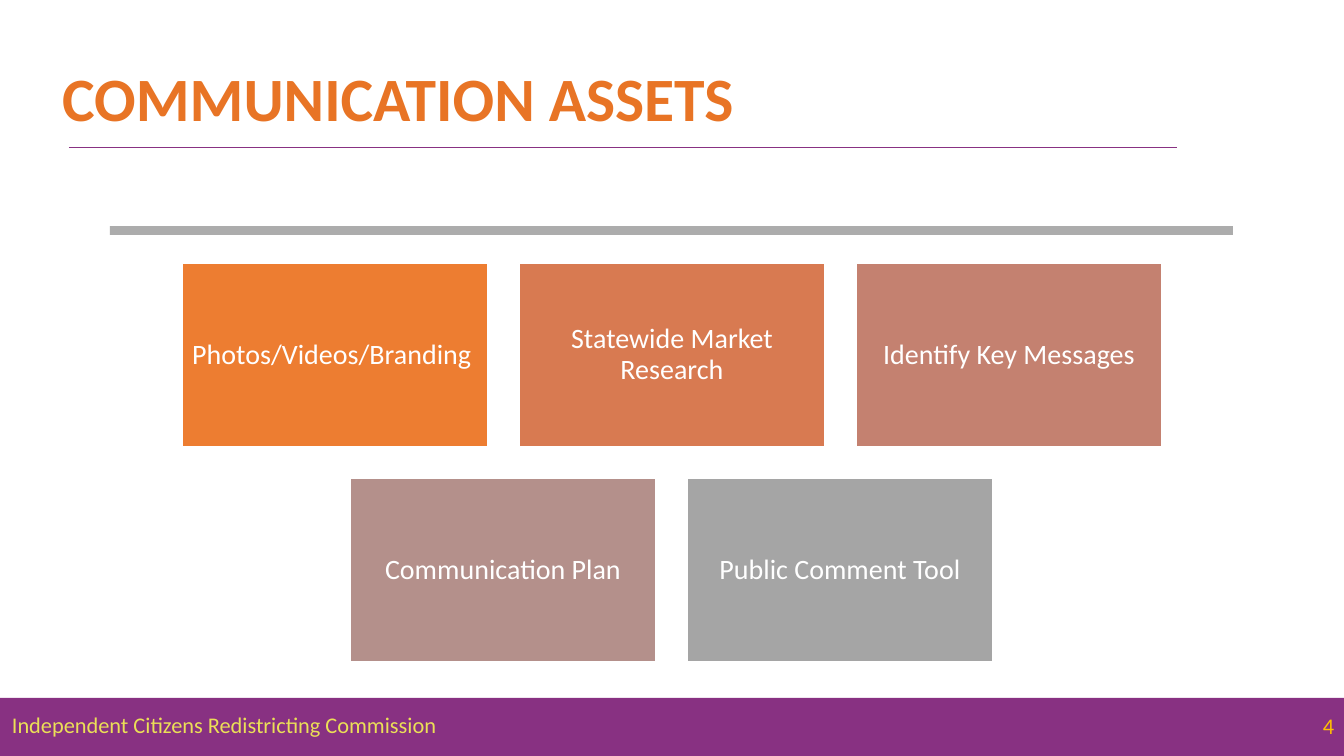
from dataclasses import dataclass

from lxml import etree
from pptx import Presentation
from pptx import util as u
from pptx.dml.color import RGBColor
from pptx.enum import shapes, text
from pptx.oxml import ns

SLIDE_WIDTH, SLIDE_HEIGHT = 1344, 756
PX_PER_INCH = 100.8
FONT = "Calibri"
WHITE = RGBColor(0xFF, 0xFF, 0xFF)
PURPLE = RGBColor(0x88, 0x31, 0x82)
YELLOW = RGBColor(0xEB, 0xDF, 0x57)
GOLD = RGBColor(0xFF, 0xC0, 0x00)
TITLE_ORANGE = RGBColor(0xE8, 0x74, 0x25)
GRAY = RGBColor(0x80, 0x80, 0x80)
CARD_WIDTH, CARD_HEIGHT, CARD_GAP, CARD_TOP, CARD_INSET = 306, 184, 31, 263, 8


@dataclass(frozen=True)
class Asset:
    label: str
    color: RGBColor


ASSET_ROWS = [
    [
        Asset("Photos/Videos/Branding ", RGBColor(0xED, 0x7D, 0x31)),
        Asset("Statewide Market Research", RGBColor(0xD8, 0x7A, 0x51)),
        Asset("Identify Key Messages", RGBColor(0xC4, 0x81, 0x70)),
    ],
    [
        Asset("Communication Plan", RGBColor(0xB4, 0x90, 0x8B)),
        Asset("Public Comment Tool", RGBColor(0xA5, 0xA5, 0xA5)),
    ],
]


def px(value: int) -> int:
    return round(value * u.Inches(1) / PX_PER_INCH)


def set_text(shape, content: str, size: int, color: RGBColor, align, bold: bool = False) -> None:
    frame = shape.text_frame
    frame.text = content
    frame.word_wrap = True
    frame.vertical_anchor = text.MSO_ANCHOR.MIDDLE
    paragraph = frame.paragraphs[0]
    paragraph.alignment = align
    paragraph.line_spacing = 0.9
    font = paragraph.runs[0].font
    font.name, font.size, font.bold = FONT, u.Pt(size), bold
    font.color.rgb = color


def add_rectangle(slide, left: int, top: int, width: int, height: int, color: RGBColor):
    shape = slide.shapes.add_shape(
        shapes.MSO_SHAPE.RECTANGLE, px(left), px(top), px(width), px(height)
    )
    shape.shadow.inherit = False
    shape.fill.solid()
    shape.fill.fore_color.rgb = color
    shape.line.fill.background()
    return shape


def add_footer(slide) -> None:
    band = add_rectangle(slide, 0, 698, SLIDE_WIDTH, 58, PURPLE)
    set_text(band, "4", 16, GOLD, text.PP_ALIGN.RIGHT)
    name = slide.shapes.add_textbox(px(2), px(708), px(520), px(37))
    set_text(name, "Independent Citizens Redistricting Commission", 16, YELLOW, text.PP_ALIGN.LEFT)


def add_title(slide) -> None:
    rule = slide.shapes.add_connector(
        shapes.MSO_CONNECTOR.STRAIGHT, px(69), px(147), px(1177), px(147)
    )
    rule.line.color.rgb = PURPLE
    rule.line.width = u.Pt(0.5)
    etree.SubElement(rule._element.spPr, ns.qn("a:effectLst"))
    title = slide.shapes.title
    title.left, title.top, title.width, title.height = px(52), px(29), px(1152), px(146)
    set_text(title, "COMMUNICATION ASSETS", 44, TITLE_ORANGE, text.PP_ALIGN.LEFT, bold=True)


def add_divider(slide) -> None:
    bar = add_rectangle(slide, 110, 226, 1123, 9, GRAY)
    color = bar._element.spPr.find(ns.qn("a:solidFill")).find(ns.qn("a:srgbClr"))
    etree.SubElement(color, ns.qn("a:alpha"), val="65000")


def add_card(slide, asset: Asset, left: int, top: int) -> None:
    card = add_rectangle(slide, left, top, CARD_WIDTH, CARD_HEIGHT, asset.color)
    card.line.color.rgb = WHITE
    card.line.width = u.Pt(1)
    frame = card.text_frame
    frame.margin_left = frame.margin_right = px(CARD_INSET)
    frame.margin_top = frame.margin_bottom = px(CARD_INSET)
    set_text(card, asset.label, 20, WHITE, text.PP_ALIGN.CENTER)


def add_cards(slide) -> None:
    for row, assets in enumerate(ASSET_ROWS):
        row_width = len(assets) * (CARD_WIDTH + CARD_GAP) - CARD_GAP
        row_left = (SLIDE_WIDTH - row_width) // 2
        top = CARD_TOP + row * (CARD_HEIGHT + CARD_GAP)
        for column, asset in enumerate(assets):
            add_card(slide, asset, row_left + column * (CARD_WIDTH + CARD_GAP), top)


def main() -> None:
    presentation = Presentation()
    presentation.slide_width = px(SLIDE_WIDTH)
    presentation.slide_height = px(SLIDE_HEIGHT)
    slide = presentation.slides.add_slide(presentation.slide_layouts.get_by_name("Title Only"))
    add_footer(slide)
    add_title(slide)
    add_divider(slide)
    add_cards(slide)
    presentation.save("out.pptx")


if __name__ == "__main__":
    main()
